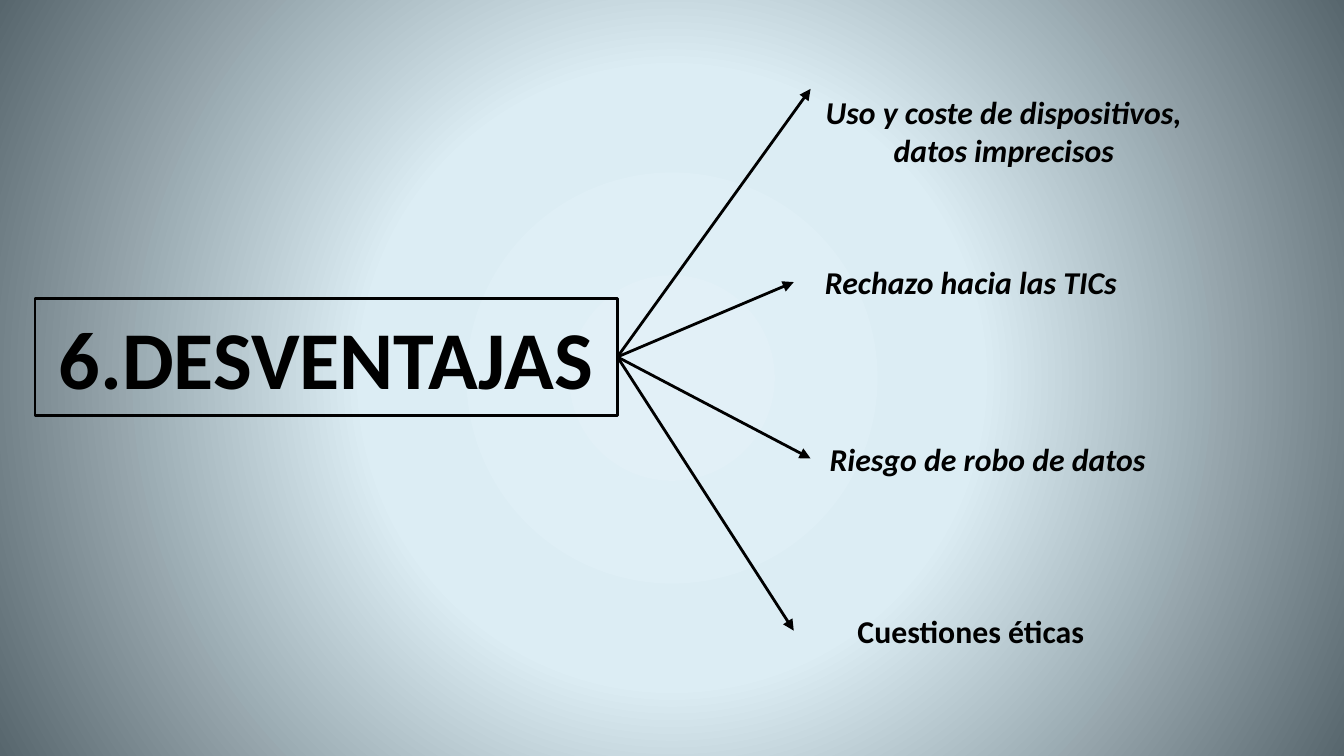
from pptx import Presentation
from pptx.dml.color import RGBColor as Rgb
from pptx.enum.shapes import MSO_CONNECTOR as Connector
from pptx.enum.text import MSO_ANCHOR as Anchor, MSO_AUTO_SIZE as AutoSize, PP_ALIGN as Align
from pptx.oxml import parse_xml
from pptx.oxml.ns import nsdecls, qn
from pptx.util import Pt

PX = 9525  # EMU per px, 96 px to the inch
COLORS = {"ink": "000000", "center": "E2F0F7", "halo": "DCEDF4", "edge": "57666D"}
INK = Rgb.from_string(COLORS["ink"])
FRAME = {"word_wrap": True, "auto_size": AutoSize.NONE, "vertical_anchor": Anchor.MIDDLE}
HEADING = {"name": "Calibri", "size": Pt(44), "bold": True, "italic": False}
LABEL = {**HEADING, "size": Pt(17), "italic": True}

TITLE_BOX = (25, 213, 416, 84)
# Text, label box, arrow tip offset from the label's left middle, format
DRAWBACKS = [
    ("Uso y coste de dispositivos, datos imprecisos", (567, 57, 300, 73), (12, -30), LABEL),
    ("Rechazo hacia las TICs", (567, 165, 253, 73), (0, 0), LABEL),
    ("Riesgo de robo de datos", (579, 291, 253, 73), (0, 0), LABEL),
    ("Cuestiones éticas", (567, 414, 253, 73), (0, 0), {**LABEL, "italic": False}),
]


def px(*lengths):
    return [round(length * PX) for length in lengths]


def set_all(target, values):
    for key, value in values.items():
        setattr(target, key, value)


def write(frame, text, font_format):
    set_all(frame, FRAME)
    frame.text = text
    paragraph = frame.paragraphs[0]
    paragraph.alignment = Align.CENTER
    font = paragraph.runs[0].font
    set_all(font, font_format)
    font.color.rgb = INK


def paint_background(slide):
    stops = "".join(
        f'<a:gs pos="{percent * 1000}"><a:srgbClr val="{COLORS[name]}"/></a:gs>'
        for percent, name in ((0, "center"), (40, "halo"), (100, "edge")))
    slide.element.find(qn("p:cSld")).insert(0, parse_xml(
        f'<p:bg {nsdecls("p", "a")}><p:bgPr><a:gradFill rotWithShape="1">'
        f'<a:gsLst>{stops}</a:gsLst><a:path path="circle">'
        '<a:fillToRect l="50000" t="50000" r="50000" b="50000"/></a:path>'
        '</a:gradFill><a:effectLst/></p:bgPr></p:bg>'))


def add_title(slide, box):
    title = slide.shapes.title
    set_all(title, dict(zip(("left", "top", "width", "height"), px(*box))))
    title.line.color.rgb = INK
    title.line.width = Pt(1.5)
    write(title.text_frame, "6.DESVENTAJAS", HEADING)


def add_arrow(slide, start, tip):
    arrow = slide.shapes.add_connector(Connector.STRAIGHT, *px(*start, *tip))
    arrow.line.color.rgb = INK
    arrow.line.width = Pt(1.5)
    arrow.line._get_or_add_ln().append(
        parse_xml(f'<a:tailEnd {nsdecls("a")} type="triangle"/>'))
    arrow.element.spPr.append(parse_xml(f'<a:effectLst {nsdecls("a")}/>'))


def add_drawback(slide, start, text, box, tip_offset, font_format):
    left, top, _, height = box
    label = slide.shapes.add_textbox(*px(*box))
    write(label.text_frame, text, font_format)
    add_arrow(slide, start, (left + tip_offset[0], top + height / 2 + tip_offset[1]))


def main():
    deck = Presentation()
    deck.slide_width, deck.slide_height = px(960, 540)
    slide = deck.slides.add_slide(deck.slide_layouts[5])  # Title Only
    paint_background(slide)
    add_title(slide, TITLE_BOX)

    # All arrows fan out from the middle of the title's right side
    left, top, width, height = TITLE_BOX
    hub = (left + width, top + height / 2)
    for drawback in DRAWBACKS:
        add_drawback(slide, hub, *drawback)
    deck.save("out.pptx")


if __name__ == "__main__":
    main()
